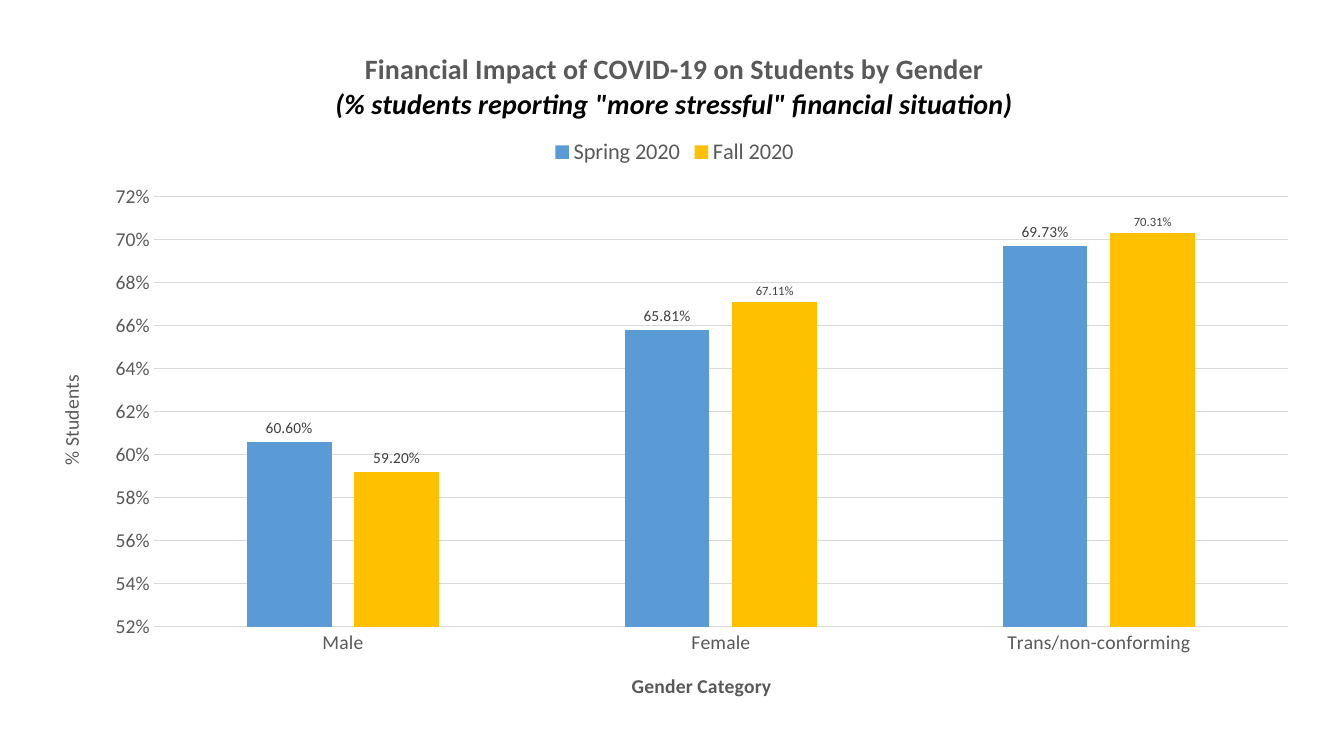
from lxml import etree
from pptx import Presentation
from pptx.chart.data import CategoryChartData
from pptx.dml.color import RGBColor
from pptx.enum.chart import XL_CHART_TYPE, XL_LABEL_POSITION, XL_LEGEND_POSITION, XL_TICK_MARK
from pptx.oxml import parse_xml
from pptx.util import Emu, Pt

COLUMN = XL_CHART_TYPE.COLUMN_CLUSTERED
OUTSIDE = XL_LABEL_POSITION.OUTSIDE_END
TOP = XL_LEGEND_POSITION.TOP
NO_TICK = XL_TICK_MARK.NONE

BLACK = RGBColor(0x00, 0x00, 0x00)
DARK = RGBColor(0x40, 0x40, 0x40)
GRAY = RGBColor(0x59, 0x59, 0x59)
PALE = RGBColor(0xD9, 0xD9, 0xD9)
BLUE = RGBColor(0x5B, 0x9B, 0xD5)
GOLD = RGBColor(0xFF, 0xC0, 0x00)

SCALE = 914400 / 100.8
C_NS = "http://schemas.openxmlformats.org/drawingml/2006/chart"


def px(n):
    return Emu(round(n * SCALE))


def style(font, size, color, bold=False, italic=False):
    font.name = "Calibri"
    font.size = Pt(size)
    font.color.rgb = color
    font.bold = bold
    font.italic = italic


prs = Presentation()
prs.slide_width = px(1344)
prs.slide_height = px(756)
slide = prs.slides.add_slide(prs.slide_layouts[6])

data = CategoryChartData(number_format="0.00%")
data.categories = ["Male", "Female", "Trans/non-conforming"]
data.add_series("Spring 2020", [0.606, 0.6581, 0.6973])
data.add_series("Fall 2020", [0.592, 0.6711, 0.7031])
left, top, width, height = 36, 28, 1277, 694
chart = slide.shapes.add_chart(COLUMN, px(left), px(top), px(width), px(height), data).chart
style(chart.font, 10, BLACK)

title = chart.chart_title.text_frame
title.text = 'Financial Impact of COVID-19 on Students by Gender\n(% students reporting "more stressful" financial situation)'
head, sub = title.paragraphs
style(head.font, 20, GRAY, True)
style(sub.font, 20, BLACK, True, True)
chart.chart_title.include_in_layout = False

chart.has_legend = True
chart.legend.position = TOP
chart.legend.include_in_layout = False
style(chart.legend.font, 16, GRAY)

cat, val = chart.category_axis, chart.value_axis
for axis, name, bold in [(cat, "Gender Category", True), (val, "% Students", False)]:
    axis.axis_title.text_frame.text = name
    style(axis.axis_title.text_frame.paragraphs[0].font, 14, GRAY, bold)
    style(axis.tick_labels.font, 14, GRAY)
    axis.major_tick_mark = axis.minor_tick_mark = NO_TICK

val.minimum_scale, val.maximum_scale, val.major_unit = 0.52, 0.72, 0.02
val.tick_labels.number_format = "0%"
val.tick_labels.number_format_is_linked = False
val.format.line.fill.background()
for line in (cat.format.line, val.major_gridlines.format.line):
    line.color.rgb = PALE
    line.width = Pt(0.75)

plot = chart.plots[0]
plot.gap_width = 219
plot.overlap = -27
plot.vary_by_categories = False
for row, color, size in zip(plot.series, (BLUE, GOLD), (11, 9)):
    row.format.fill.solid()
    row.format.fill.fore_color.rgb = color
    row.invert_if_negative = False
    tags = row.data_labels
    tags.show_value = True
    tags.position = OUTSIDE
    tags.number_format = "0.00%"
    tags.number_format_is_linked = False
    style(tags.font, size, DARK)

tag = plot.series[1].points[0].data_label
style(tag.font, 11, DARK)
tag.position = OUTSIDE

area = chart._chartSpace.chart.plotArea
for old in area.findall(f"{{{C_NS}}}layout"):
    area.remove(old)
layout = parse_xml(f'<c:layout xmlns:c="{C_NS}"><c:manualLayout/></c:layout>')
places = [
    ("layoutTarget", "inner"), ("xMode", "edge"), ("yMode", "edge"),
    ("x", (154 - left) / width), ("y", (197 - top) / height),
    ("w", 1134 / width), ("h", 430 / height),
]
for key, value in places:
    etree.SubElement(layout[0], f"{{{C_NS}}}{key}").set("val", str(value))
area.insert(0, layout)

prs.save("out.pptx")
